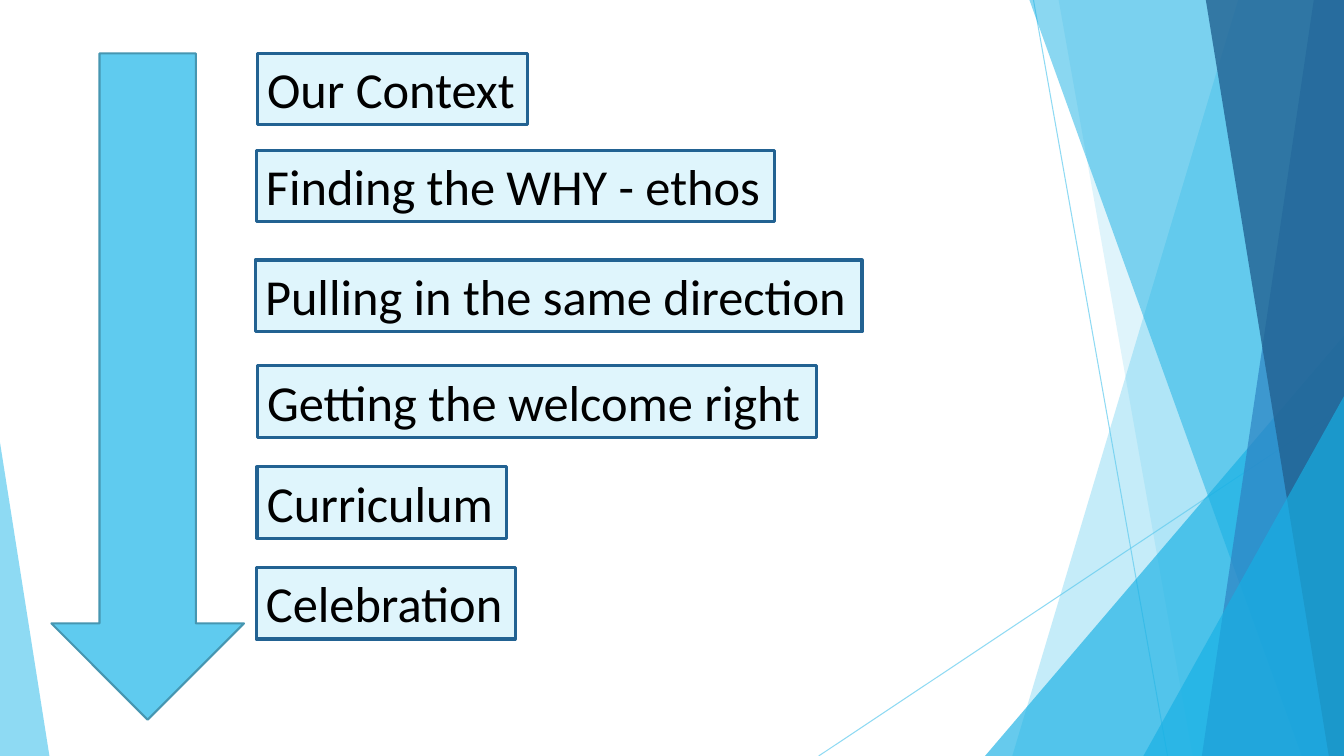
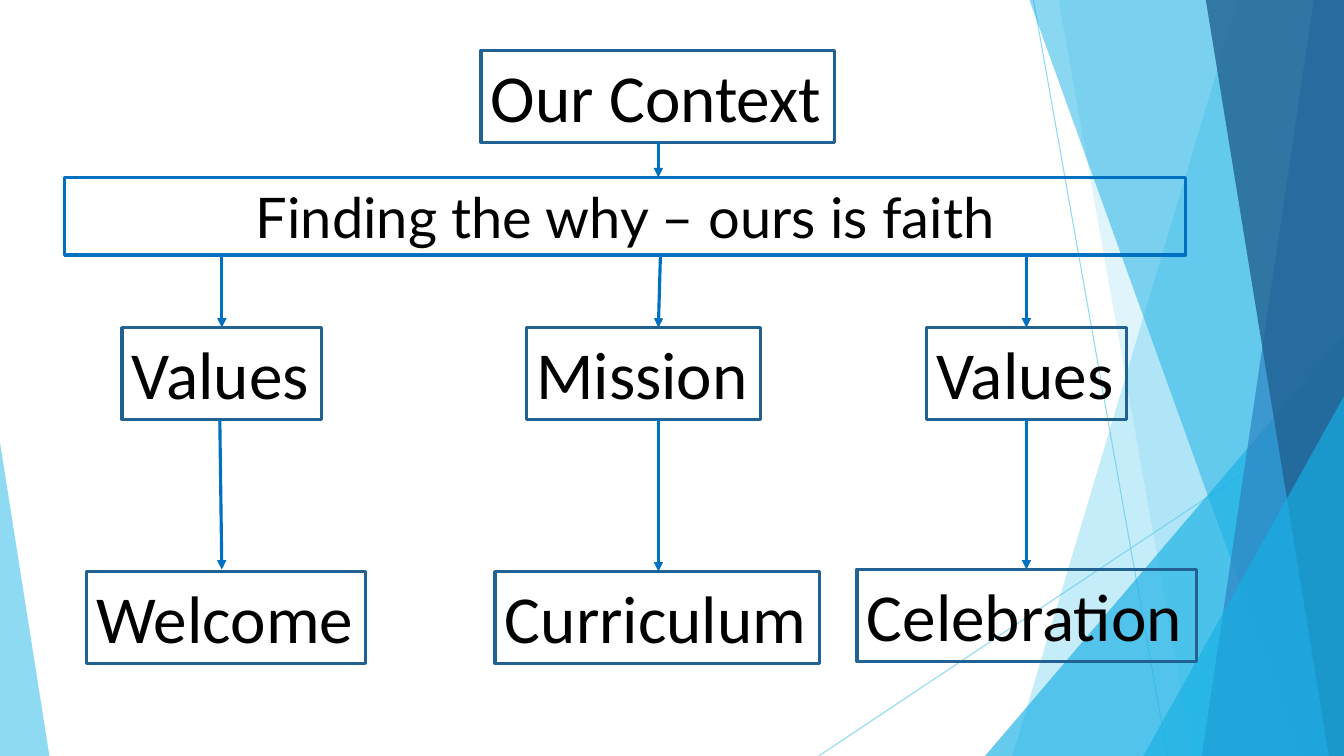
"""Build two slides on a school's context, ethos and priorities."""
import lxml.etree
import pptx
import pptx.dml.color
import pptx.enum.shapes
import pptx.enum.text
import pptx.oxml.ns
import pptx.util

Inches = pptx.util.Inches
Pt = pptx.util.Pt
Shape = pptx.enum.shapes.MSO_SHAPE
qn = pptx.oxml.ns.qn

WIDTH, HEIGHT = 13.33, 7.5
SKY, CYAN, MID_BLUE, NAVY = "5FCBEF", "17B0E4", "2E83C3", "226292"
PALE, ARROW_EDGE, FLOW_BLUE, BLACK = "DFF5FC", "4696B1", "0070C0", "000000"


def colour(hex_text):
    return pptx.dml.color.RGBColor.from_string(hex_text)


class Deck:
    def __init__(self):
        self.presentation = pptx.Presentation()
        self.presentation.slide_width = Inches(WIDTH)
        self.presentation.slide_height = Inches(HEIGHT)
        self.layout = self.presentation.slide_layouts[6]
        self.slide = None

    def new_slide(self):
        self.slide = self.presentation.slides.add_slide(self.layout)

    def set_opacity(self, shape, percent):
        for tint in shape._element.spPr.iter(qn("a:srgbClr")):
            lxml.etree.SubElement(tint, qn("a:alpha"), val=str(percent * 1000))

    def paint(self, shape, fill, opacity=100, edge=None, weight=1.5):
        shape.shadow.inherit = False
        shape.fill.solid()
        shape.fill.fore_color.rgb = colour(fill)
        if edge:
            shape.line.color.rgb = colour(edge)
            shape.line.width = Pt(weight)
        else:
            shape.line.fill.background()
        if opacity < 100:
            self.set_opacity(shape, opacity)

    def preset(self, kind, bounds, fill, adjustment=None, **style):
        shape = self.slide.shapes.add_shape(kind, *map(Inches, bounds))
        if adjustment is not None:
            shape.adjustments[0] = adjustment
        self.paint(shape, fill, **style)

    def band(self, top_left, bottom_left, fill, opacity):
        corners = [(WIDTH, 0), (WIDTH, HEIGHT), (bottom_left, HEIGHT)]
        outline = self.slide.shapes.build_freeform(Inches(top_left), 0)
        outline.add_line_segments([(Inches(x), Inches(y)) for x, y in corners])
        self.paint(outline.convert_to_shape(), fill, opacity)

    def line(self, start, end, ink, weight, opacity=100, arrow=False):
        connector = self.slide.shapes.add_connector(
            pptx.enum.shapes.MSO_CONNECTOR.STRAIGHT, *map(Inches, start + end))
        connector.line.color.rgb = colour(ink)
        connector.line.width = Pt(weight)
        properties = connector._element.spPr
        lxml.etree.SubElement(properties, qn("a:effectLst"))
        if opacity < 100:
            self.set_opacity(connector, opacity)
        if arrow:
            stroke = properties.find(qn("a:ln"))
            lxml.etree.SubElement(stroke, qn("a:tailEnd"), type="triangle")

    def box(self, text, bounds, size, fill=None, edge=NAVY, font="Calibri", centred=False):
        label = self.slide.shapes.add_textbox(*map(Inches, bounds))
        label.line.color.rgb = colour(edge)
        label.line.width = Pt(2.25)
        if fill:
            label.fill.solid()
            label.fill.fore_color.rgb = colour(fill)
        frame = label.text_frame
        frame.word_wrap = centred
        frame.auto_size = pptx.enum.text.MSO_AUTO_SIZE.SHAPE_TO_FIT_TEXT
        paragraph = frame.paragraphs[0]
        if centred:
            paragraph.alignment = pptx.enum.text.PP_ALIGN.CENTER
        run = paragraph.add_run()
        run.text = text
        run.font.name = font
        run.font.size = Pt(size)
        run.font.color.rgb = colour(BLACK)

    def backdrop(self):
        """Draw the facets and move them to the layout that all slides share."""
        self.line((10.25, 0), (11.58, HEIGHT), SKY, 0.75, opacity=70)
        self.line((WIDTH, 4.03), (8.12, HEIGHT), SKY, 0.75, opacity=70)
        self.band(12.28, 10.04, SKY, 36)
        self.band(10.5, 11.83, SKY, 20)
        self.preset(Shape.ISOSCELES_TRIANGLE, (9.77, 3.33, 3.56, 4.17), CYAN, 1, opacity=66)
        self.band(10.21, 12.91, CYAN, 50)
        self.band(13.03, 11.92, MID_BLUE, 70)
        self.band(11.96, 13.18, NAVY, 80)
        self.preset(Shape.ISOSCELES_TRIANGLE, (11.34, 3.93, 1.99, 3.57), CYAN, 1, opacity=66)
        self.preset(Shape.ISOSCELES_TRIANGLE, (0, 4.39, 0.49, 3.11), SKY, 0, opacity=70)
        for placeholder in list(self.layout.placeholders):
            self.layout.shapes.element.remove(placeholder._element)
        for facet in list(self.slide.shapes):
            self.layout.shapes.element.append(facet._element)


def journey(deck):
    deck.preset(Shape.DOWN_ARROW, (0.51, 0.53, 1.91, 6.61), SKY, edge=ARROW_EDGE)
    stages = [
        ("Our Context", 2.55, 0.53, 2.68),
        ("Finding the WHY - ethos", 2.54, 1.49, 5.14),
        ("Pulling in the same direction", 2.53, 2.58, 6.02),
        ("Getting the welcome right", 2.55, 3.63, 5.55),
        ("Curriculum", 2.55, 4.63, 2.47),
        ("Celebration", 2.54, 5.63, 2.57),
    ]
    for stage, left, top, width in stages:
        deck.box(stage, (left, top, width, 0.71), 36, fill=PALE)


def ethos_map(deck):
    deck.box("Finding the why – ours is faith", (0.64, 1.76, 11.12, 0.77), 40,
             edge=FLOW_BLUE, font="Lato", centred=True)
    themes = [
        ("Our Context", 4.77, 0.5, 3.51),
        ("Values", 1.21, 3.25, 1.98),
        ("Mission", 5.22, 3.25, 2.32),
        ("Values", 9.19, 3.25, 1.98),
        ("Welcome", 0.86, 5.67, 2.77),
        ("Curriculum", 4.91, 5.67, 3.22),
        ("Celebration", 8.5, 5.65, 3.37),
    ]
    for theme, left, top, width in themes:
        deck.box(theme, (left, top, width, 0.91), 48)
    flows = [
        ((6.53, 1.41), (6.53, 1.76)),
        ((2.2, 2.54), (2.2, 3.25)),
        ((6.55, 2.54), (6.53, 3.25)),
        ((10.18, 2.54), (10.18, 3.25)),
        ((2.18, 4.16), (2.2, 5.65)),
        ((6.53, 4.16), (6.53, 5.67)),
        ((10.18, 4.16), (10.18, 5.65)),
    ]
    for start, end in flows:
        deck.line(start, end, FLOW_BLUE, 2.25, arrow=True)


def main():
    deck = Deck()
    deck.new_slide()
    deck.backdrop()
    journey(deck)
    deck.new_slide()
    ethos_map(deck)
    deck.presentation.save("out.pptx")


if __name__ == "__main__":
    main()
